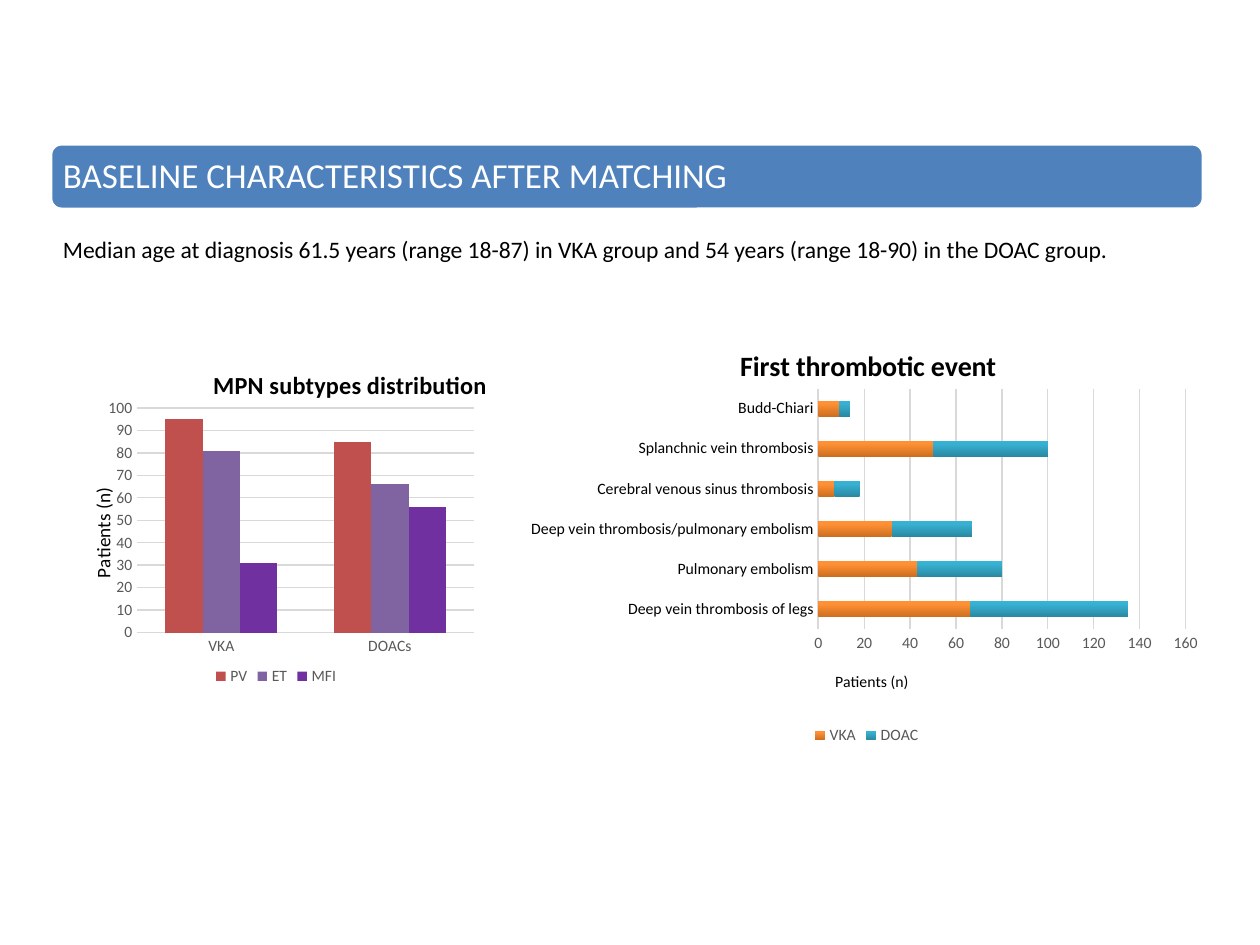
from dataclasses import dataclass

from lxml.etree import SubElement
from pptx import Presentation
from pptx.chart.data import CategoryChartData
from pptx.dml.color import RGBColor
from pptx.enum.chart import XL_CHART_TYPE, XL_LEGEND_POSITION, XL_TICK_MARK
from pptx.enum.shapes import MSO_SHAPE
from pptx.enum.text import MSO_ANCHOR, MSO_AUTO_SIZE
from pptx.oxml import parse_xml
from pptx.oxml.ns import nsdecls, qn
from pptx.util import Cm, Pt

FONT = "Calibri"
BLACK, WHITE, BLUE = "000000", "FFFFFF", "4F81BD"
GREY, GRID = "595959", "D9D9D9"


@dataclass
class Series:
    name: str
    values: tuple
    colors: tuple  # one colour, or three gradient stops from bottom to top


@dataclass
class Label:
    text: str
    size: float
    layout: tuple  # left and top as fractions of the chart
    bold: bool = False
    rotation: int = 0


@dataclass
class ChartSpec:
    kind: XL_CHART_TYPE
    box: tuple  # left, top, width, height in centimetres
    categories: tuple
    series: tuple
    title: Label
    value_title: Label
    plot: tuple  # left, top, width, height as fractions of the chart
    maximum: int
    unit: int
    category_color: str
    category_line: bool
    overlap: int


CHARTS = (
    ChartSpec(
        XL_CHART_TYPE.COLUMN_CLUSTERED, (1.32, 7.06, 8.59, 6.86),
        ("VKA", "DOACs"),
        (Series("PV", (95, 85), ("C0504D",)),
         Series("ET", (81, 66), ("8064A2",)),
         Series("MFI", (31, 56), ("7030A0",))),
        Label("MPN subtypes distribution", 14, (0.34, 0.04), bold=True),
        Label("Patients (n)", 11, (0.05, 0.39), rotation=-90),
        (0.17, 0.17, 0.8, 0.66), 100, 10, GREY, False, 0,
    ),
    ChartSpec(
        XL_CHART_TYPE.BAR_STACKED, (10.49, 6.45, 13.97, 8.66),
        ("Deep vein thrombosis of legs", "Pulmonary embolism",
         "Deep vein thrombosis/pulmonary embolism",
         "Cerebral venous sinus thrombosis",
         "Splanchnic vein thrombosis", "Budd-Chiari"),
        (Series("VKA", (66, 43, 32, 7, 50, 9), ("CC6E20", "FF9034", "FF9136")),
         Series("DOAC", (69, 37, 35, 11, 50, 5), ("2A88A2", "37B1D2", "34B4D6"))),
        Label("First thrombotic event", 16, (0.31, 0.05), bold=True),
        Label("Patients (n)", 9, (0.45, 0.81)),
        (0.43, 0.16, 0.53, 0.56), 160, 20, BLACK, True, 100,
    ),
)


def rgb(color: str) -> RGBColor:
    return RGBColor.from_string(color)


def set_font(font, size: float, color: str, bold: bool = False) -> None:
    font.name, font.size, font.bold = FONT, Pt(size), bold
    font.color.rgb = rgb(color)


def add_text(shapes, box: tuple, text: str, size: float, color: str):
    """Add a one-paragraph text box and return its text frame."""
    frame = shapes.add_textbox(*(Cm(value) for value in box)).text_frame
    frame.word_wrap = True
    frame.text = text
    set_font(frame.paragraphs[0].runs[0].font, size, color)
    return frame


def set_layout(element, values: tuple) -> None:
    """Place a chart part by fractions of the chart area."""
    for old in element.findall(qn("c:layout")):
        element.remove(old)
    layout = parse_xml(f"<c:layout {nsdecls('c')}><c:manualLayout/></c:layout>")
    manual = layout[0]
    if len(values) == 4:
        SubElement(manual, qn("c:layoutTarget")).set("val", "inner")
    for tag in ("xMode", "yMode"):
        SubElement(manual, qn(f"c:{tag}")).set("val", "edge")
    for tag, value in zip("xywh", values):
        SubElement(manual, qn(f"c:{tag}")).set("val", str(value))
    element.insert(0 if element.find(qn("c:tx")) is None else 1, layout)


def set_label(title, label: Label) -> None:
    frame = title.text_frame
    frame.text = label.text
    set_font(frame.paragraphs[0].runs[0].font, label.size, BLACK, label.bold)
    body = title._element.find(".//" + qn("a:bodyPr"))
    body.set("rot", str(label.rotation * 60000))
    set_layout(title._element, label.layout)


def fill_series(fill, colors: tuple) -> None:
    if len(colors) == 1:
        fill.solid()
        fill.fore_color.rgb = rgb(colors[0])
        return
    fill.gradient()
    gradient = fill._xPr.find(qn("a:gradFill"))
    stops = gradient.find(qn("a:gsLst"))
    for stop in list(stops):
        stops.remove(stop)
    for position, color in zip((0, 80, 100), colors):
        stop = SubElement(stops, qn("a:gs"), pos=str(position * 1000))
        SubElement(stop, qn("a:srgbClr"), val=color)
    gradient.find(qn("a:lin")).set("ang", str(270 * 60000))


def add_chart(shapes, spec: ChartSpec) -> None:
    data = CategoryChartData()
    data.categories = spec.categories
    for series in spec.series:
        data.add_series(series.name, series.values)
    box = (Cm(value) for value in spec.box)
    chart = shapes.add_chart(spec.kind, *box, data).chart
    set_font(chart.font, 10, BLACK)
    set_label(chart.chart_title, spec.title)
    set_layout(chart._chartSpace.find(".//" + qn("c:plotArea")), spec.plot)

    # Bars
    plot = chart.plots[0]
    plot.gap_width, plot.overlap = 150, spec.overlap
    plot.vary_by_categories = False
    for drawn, series in zip(plot.series, spec.series):
        fill_series(drawn.format.fill, series.colors)

    # Axes
    category_axis, value_axis = chart.category_axis, chart.value_axis
    for axis, color in ((category_axis, spec.category_color), (value_axis, GREY)):
        axis.major_tick_mark = axis.minor_tick_mark = XL_TICK_MARK.NONE
        set_font(axis.tick_labels.font, 9, color)
        axis.format.line.fill.background()
    if spec.category_line:
        category_axis.format.line.color.rgb = rgb(GRID)
        category_axis.format.line.width = Pt(1)
    value_axis.minimum_scale, value_axis.maximum_scale = 0, spec.maximum
    value_axis.major_unit = spec.unit
    value_axis.has_major_gridlines = True
    value_axis.major_gridlines.format.line.color.rgb = rgb(GRID)
    value_axis.major_gridlines.format.line.width = Pt(0.75)
    set_label(value_axis.axis_title, spec.value_title)

    # Legend
    chart.has_legend = True
    chart.legend.position = XL_LEGEND_POSITION.BOTTOM
    chart.legend.include_in_layout = False
    set_font(chart.legend.font, 9, GREY)


def main() -> None:
    presentation = Presentation()
    presentation.slide_width, presentation.slide_height = Cm(25.4), Cm(19.05)
    slide = presentation.slides.add_slide(presentation.slide_layouts[6])

    # Heading banner
    banner = slide.shapes.add_group_shape().shapes
    bar = banner.add_shape(MSO_SHAPE.ROUNDED_RECTANGLE,
                           Cm(1.02), Cm(2.9), Cm(23.24), Cm(1.32))
    bar.shadow.inherit = False
    bar.fill.solid()
    bar.fill.fore_color.rgb = rgb(BLUE)
    bar.line.color.rgb = rgb(WHITE)
    bar.line.width = Pt(2)
    heading = add_text(banner, (1.07, 2.97, 23.11, 1.19),
                       "BASELINE CHARACTERISTICS AFTER MATCHING", 20, WHITE)
    heading.vertical_anchor = MSO_ANCHOR.MIDDLE
    heading.margin_left = heading.margin_right = Cm(0.2)
    heading.margin_top = heading.margin_bottom = Cm(0.2)
    heading.paragraphs[0].line_spacing = 0.9

    # Summary line
    summary = add_text(
        slide.shapes, (1.02, 4.62, 22.33, 0.84),
        "Median age at diagnosis 61.5 years (range 18-87) in VKA group "
        "and 54 years (range 18-90) in the DOAC group.", 13.5, BLACK)
    summary.auto_size = MSO_AUTO_SIZE.SHAPE_TO_FIT_TEXT

    # Charts
    for spec in CHARTS:
        add_chart(slide.shapes, spec)

    presentation.save("out.pptx")


if __name__ == "__main__":
    main()
